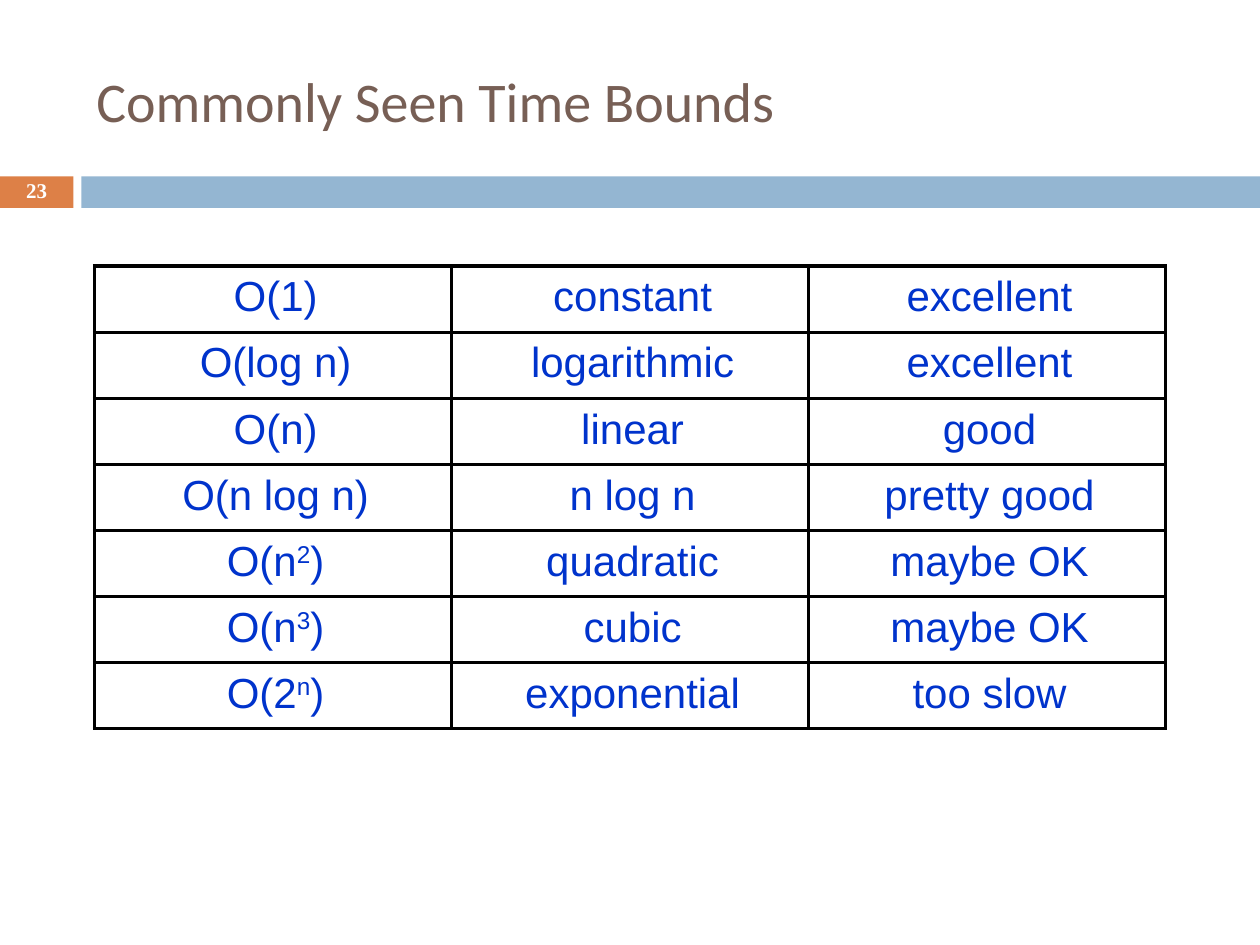
import pptx
import pptx.dml.color
import pptx.enum.shapes
import pptx.enum.text
import pptx.oxml.ns
import pptx.util
from lxml import etree

Pt = pptx.util.Pt
ANCHOR = pptx.enum.text.MSO_ANCHOR
ALIGN = pptx.enum.text.PP_ALIGN

# Each cell is a list of (text, is_superscript) runs or a plain string
TIME_BOUNDS = [
    ("O(1)", "constant", "excellent"),
    ("O(log n)", "logarithmic", "excellent"),
    ("O(n)", "linear", "good"),
    ("O(n log n)", "n log n", "pretty good"),
    ([("O(n", False), ("2", True), (")", False)], "quadratic", "maybe OK"),
    ([("O(n", False), ("3", True), (")", False)], "cubic", "maybe OK"),
    ([("O(2", False), ("n", True), (")", False)], "exponential", "too slow"),
]


def color(hex_code):
    return pptx.dml.color.RGBColor.from_string(hex_code)


def add_run(paragraph, text, font, size, hex_code, bold=False, superscript=False):
    run = paragraph.add_run()
    run.text = text
    run.font.name = font
    run.font.size = Pt(size)
    run.font.bold = bold
    run.font.color.rgb = color(hex_code)
    if superscript:
        run._r.get_or_add_rPr().set("baseline", "30000")


def add_bar(slide, left, top, width, height, hex_code):
    bar = slide.shapes.add_shape(
        pptx.enum.shapes.MSO_SHAPE.RECTANGLE, Pt(left), Pt(top), Pt(width), Pt(height))
    bar.shadow.inherit = False
    bar.fill.solid()
    bar.fill.fore_color.rgb = color(hex_code)
    bar.line.fill.background()


def add_label(slide, left, top, width, height):
    """Add a wrapping, vertically centred text box and return its paragraph."""
    frame = slide.shapes.add_textbox(Pt(left), Pt(top), Pt(width), Pt(height)).text_frame
    frame.word_wrap = True
    frame.vertical_anchor = ANCHOR.MIDDLE
    return frame.paragraphs[0]


def set_borders(cell, hex_code, width):
    properties = cell._tc.get_or_add_tcPr()
    qn = pptx.oxml.ns.qn
    for side in ("a:lnL", "a:lnR", "a:lnT", "a:lnB"):
        line = etree.SubElement(properties, qn(side), w=str(Pt(width)))
        fill = etree.SubElement(line, qn("a:solidFill"))
        etree.SubElement(fill, qn("a:srgbClr"), val=hex_code)


def fill_cell(cell, content):
    set_borders(cell, "000000", 2)
    cell.fill.background()
    cell.margin_left = cell.margin_right = Pt(4.5)
    cell.margin_top = cell.margin_bottom = Pt(4.5)
    paragraph = cell.text_frame.paragraphs[0]
    paragraph.alignment = ALIGN.CENTER
    paragraph._p.get_or_add_pPr().set("marL", str(Pt(3)))
    runs = [(content, False)] if isinstance(content, str) else content
    for text, superscript in runs:
        add_run(paragraph, text, "Arial", 24, "0033CC", superscript=superscript)


def add_bounds_table(slide, left, top, column_width, row_height):
    rows, columns = len(TIME_BOUNDS), len(TIME_BOUNDS[0])
    bounds = slide.shapes.add_table(
        rows, columns, Pt(left), Pt(top),
        Pt(column_width * columns), Pt(row_height * rows)).table
    bounds.first_row = False
    bounds.horz_banding = False
    for column in bounds.columns:
        column.width = Pt(column_width)
    for row, contents in zip(bounds.rows, TIME_BOUNDS):
        row.height = Pt(row_height)
        for cell, content in zip(row.cells, contents):
            fill_cell(cell, content)


def main():
    deck = pptx.Presentation()
    deck.slide_width, deck.slide_height = Pt(720), Pt(540)
    slide = deck.slides.add_slide(deck.slide_layouts[6])

    # Header band
    add_bar(slide, 0, 100.8, 42, 18, "DD8047")
    add_bar(slide, 46.5, 100.8, 673.5, 18, "94B6D2")

    # Title
    title = add_label(slide, 48, 18, 642, 78)
    add_run(title, "Commonly Seen Time Bounds", "Calibri", 32, "775F55")

    # Slide number
    number = add_label(slide, 0, 100, 42, 19.5)
    number.alignment = ALIGN.CENTER
    number.line_spacing = 0.8
    add_run(number, "23", "Times New Roman", 12, "FFFFFF", bold=True)

    # Time bounds
    add_bounds_table(slide, 54, 152, 204, 37.7)

    deck.save("out.pptx")


if __name__ == "__main__":
    main()
